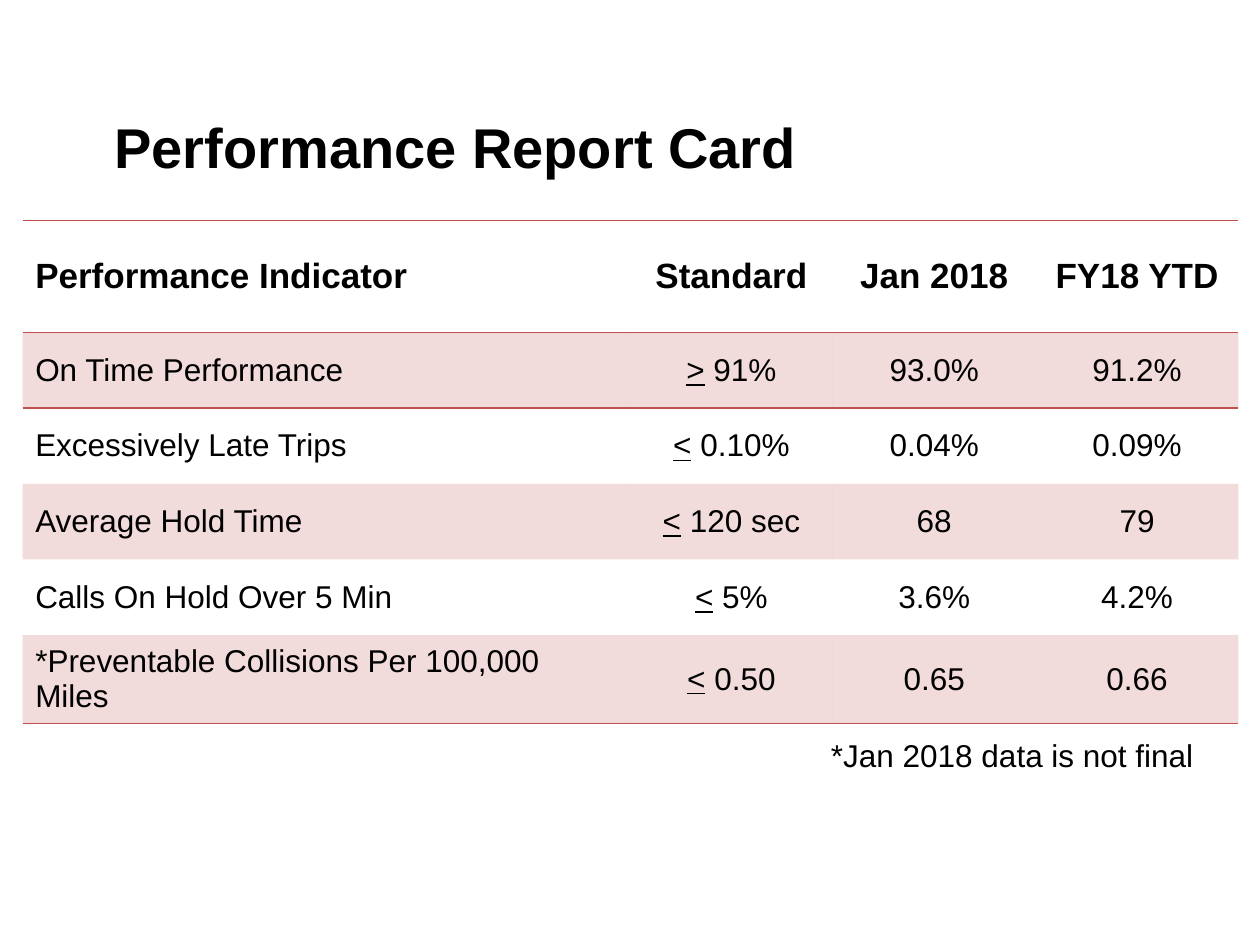
"""Build the performance report card slide."""
from pptx import Presentation
from pptx.dml.color import RGBColor
from pptx.enum.text import MSO_ANCHOR, PP_ALIGN
from pptx.oxml import parse_xml
from pptx.oxml.ns import nsdecls, qn
from pptx.util import Inches, Pt
from lxml.etree import SubElement

BLACK = RGBColor(0x00, 0x00, 0x00)
RED = RGBColor(0xC0, 0x50, 0x4D)
PLAIN = "{2D5ABB26-0587-4C30-8999-92F81FD0307C}"

ROWS = [
    ("Performance Indicator", "Standard", "Jan 2018", "FY18 YTD"),
    ("On Time Performance", "> 91%", "93.0%", "91.2%"),
    ("Excessively Late Trips", "< 0.10%", "0.04%", "0.09%"),
    ("Average Hold Time", "< 120 sec", "68", "79"),
    ("Calls On Hold Over 5 Min", "< 5%", "3.6%", "4.2%"),
    ("*Preventable Collisions Per 100,000 Miles", "< 0.50", "0.65", "0.66"),
]
WIDTHS = [4.82, 1.61, 1.61, 1.61]
HEIGHTS = [0.89, 0.6, 0.6, 0.6, 0.6, 0.63]
EDGES = {0: ("lnT", "lnB"), 1: ("lnT",), len(ROWS) - 1: ("lnB",)}


def style(para, size, bold=False, align=PP_ALIGN.LEFT):
    para.alignment = align
    font = para.font
    font.name, font.size, font.bold = "Arial", Pt(size), bold
    font.color.rgb = BLACK


def add_text(text, box, size, bold, align, anchor):
    frame = slide.shapes.add_textbox(*map(Inches, box)).text_frame
    frame.word_wrap = True
    frame.vertical_anchor = anchor
    frame.text = text
    style(frame.paragraphs[0], size, bold, align)


deck = Presentation()
deck.slide_width, deck.slide_height = Inches(10), Inches(7.5)
slide = deck.slides.add_slide(deck.slide_layouts[6])

add_text("Performance Report Card", (0.81, 0.84, 8.39, 0.64), 32, True,
         PP_ALIGN.LEFT, MSO_ANCHOR.MIDDLE)

table = slide.shapes.add_table(
    len(ROWS), len(WIDTHS), Inches(0.18), Inches(1.75),
    Inches(sum(WIDTHS)), Inches(sum(HEIGHTS))).table
table._tbl.tblPr.find(qn("a:tableStyleId")).text = PLAIN
for col, width in zip(table.columns, WIDTHS):
    col.width = Inches(width)

for r, (row, height) in enumerate(zip(ROWS, HEIGHTS)):
    table.rows[r].height = Inches(height)
    for c, text in enumerate(row):
        cell = table.cell(r, c)
        cell.vertical_anchor = MSO_ANCHOR.MIDDLE
        para = cell.text_frame.paragraphs[0]
        if r and c == 1:
            sign = para.add_run()
            sign.text = text[0]
            sign.font.underline = True
            para.add_run().text = text[1:]
        else:
            para.add_run().text = text
        style(para, 18 if r else 20, r == 0,
              PP_ALIGN.CENTER if c else PP_ALIGN.LEFT)

        props = cell._tc.get_or_add_tcPr()
        for edge in EDGES.get(r, ()):
            props.append(parse_xml(
                f'<a:{edge} {nsdecls("a")} w="12700"><a:solidFill>'
                f'<a:srgbClr val="{RED}"/></a:solidFill></a:{edge}>'))
        if r % 2:
            cell.fill.solid()
            cell.fill.fore_color.rgb = RED
            tint = props.find(qn("a:solidFill")).find(qn("a:srgbClr"))
            SubElement(tint, qn("a:alpha"), val="20000")
        else:
            cell.fill.background()

add_text("*Jan 2018 data is not final", (3.94, 5.79, 5.63, 0.4), 18, False,
         PP_ALIGN.RIGHT, MSO_ANCHOR.TOP)

deck.save("out.pptx")
